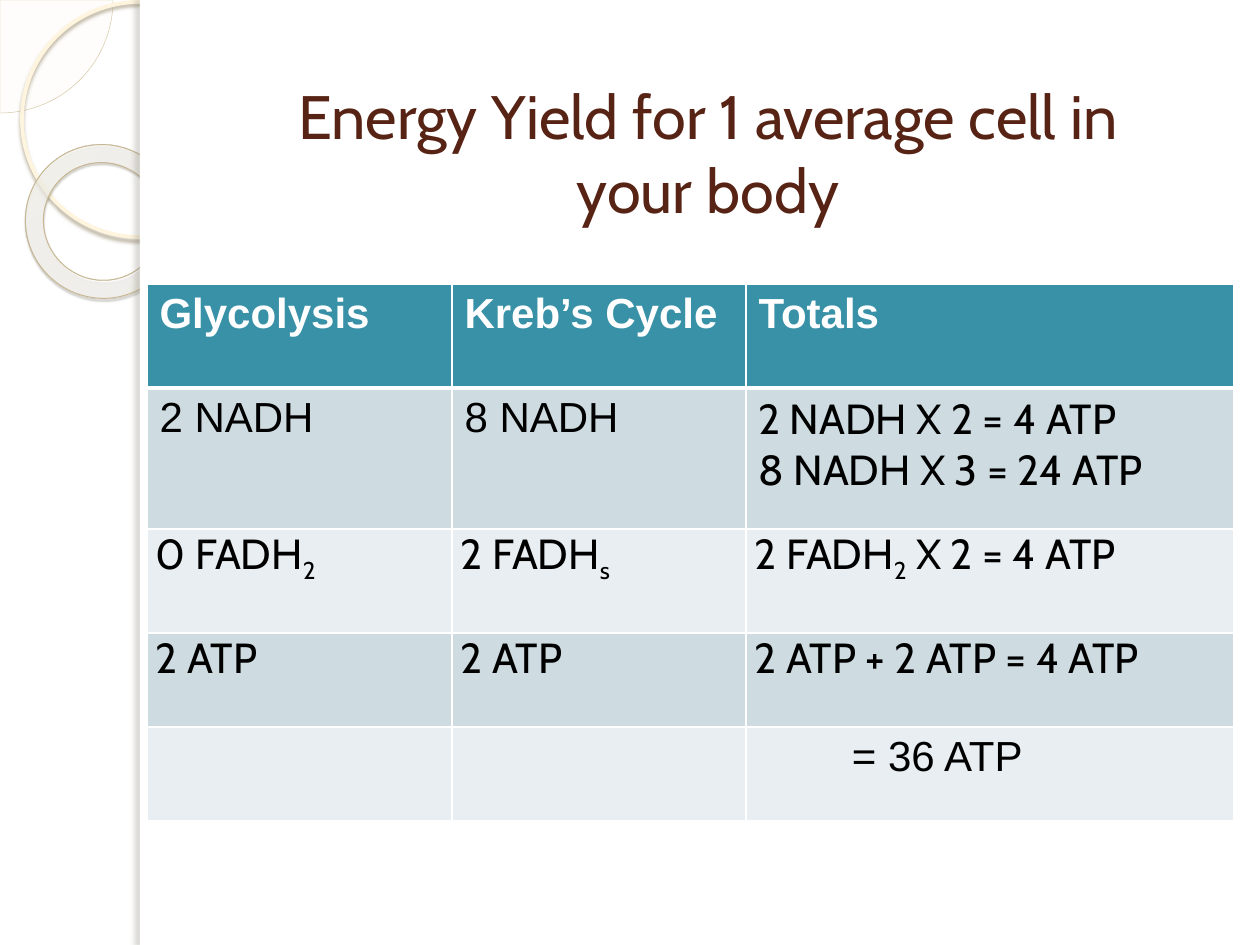
from lxml import etree
from pptx import Presentation
from pptx.dml.color import RGBColor
from pptx.enum.shapes import MSO_SHAPE
from pptx.enum.text import MSO_ANCHOR, PP_ALIGN
from pptx.oxml import parse_xml
from pptx.oxml.ns import qn
from pptx.util import Pt

PX = 914400 // 126
NS = 'xmlns:a="http://schemas.openxmlformats.org/drawingml/2006/main"'
PIE, ELLIPSE, DONUT, RECT = (MSO_SHAPE.PIE, MSO_SHAPE.OVAL, MSO_SHAPE.DONUT,
                             MSO_SHAPE.RECTANGLE)
COLORS = {
    "white": "FFFFFF", "black": "000000", "title": "572314", "header": "3891A7",
    "band": "CEDCE1", "light": "E8EEF1", "pie": "FEFAF4", "pie line": "D3C39F",
    "ring": "FFF5DE", "ring shadow": "B0A68F", "donut line": "C7B893",
    "donut shadow": "5A5444", "panel shadow": "736F63",
}

# Content: a cell is a list of lines; "_" marks the next letter as subscript
TITLE = "Energy Yield for 1 average cell in your body"
ROWS = [
    [["Glycolysis"], ["Kreb’s Cycle"], ["Totals"]],
    [["2 NADH"], ["8 NADH"], ["2 NADH X 2 = 4 ATP", "8 NADH X 3 = 24 ATP"]],
    [["0 FADH_2"], ["2 FADH_s"], ["2 FADH_2 X 2 = 4 ATP"]],
    [["2 ATP"], ["2 ATP"], ["2 ATP + 2 ATP = 4 ATP"]],
    [[], [], ["= 36 ATP"]],
]
COL_W = [305, 294, 488]
ROW_H = [104, 141, 104, 94, 94]
CABIN_CELLS = {(1, 2)} | {(r, c) for r in (2, 3) for c in range(3)}
TIGHT_ROWS = (2, 3)
TOTAL_CELL, TOTAL_INDENT = (4, 2), 106

# Decoration: shape, box, fill, (line, width), (shadow, alpha %, blur, distance, angle)
DECOR = [
    (PIE, (-113, -113, 226, 226), "pie", ("pie line", 0.25), None),
    (ELLIPSE, (22, 2, 235, 235), None, ("ring", 2.15), ("ring shadow", 85, 2, 2, 90)),
    (DONUT, (25, 145, 155, 153), None, ("donut line", 0.58),
     ("donut shadow", 35, 1, 1.2, 75)),
    (RECT, (140, 0, 1120, 945), "white", None, None),
    (RECT, (140, 0, 10, 945), "white", None, ("panel shadow", 25, 3, 3, 180)),
]
DONUT_STOPS = [(0, "FFFCF6", 70), (70, "FFFEFB", 55), (100, "F0D28E", 60)]


def px(*values):
    return [v * PX for v in values]


def rgb(name):
    return RGBColor.from_string(COLORS[name])


def set_alpha(shape, percent):
    color = shape.fill._xPr.find(".//" + qn("a:srgbClr"))
    etree.SubElement(color, qn("a:alpha"), val=str(percent * 1000))


def add_shadow(shape, name, alpha, blur, dist, angle):
    effects = shape._element.spPr.find(qn("a:effectLst"))
    effects.append(parse_xml(
        f'<a:outerShdw {NS} blurRad="{Pt(blur)}" dist="{Pt(dist)}" dir="{angle * 60000}" '
        f'algn="tl" rotWithShape="0"><a:srgbClr val="{COLORS[name]}">'
        f'<a:alpha val="{alpha * 1000}"/></a:srgbClr></a:outerShdw>'))


def add_gradient(shape, stops):
    gs = "".join(f'<a:gs pos="{pos * 1000}"><a:srgbClr val="{color}">'
                 f'<a:alpha val="{alpha * 1000}"/></a:srgbClr></a:gs>'
                 for pos, color, alpha in stops)
    spPr = shape._element.spPr
    spPr.replace(spPr.find(qn("a:noFill")), parse_xml(
        f'<a:gradFill {NS}><a:gsLst>{gs}</a:gsLst><a:path path="circle">'
        '<a:fillToRect l="-408000" t="-50000" r="508000" b="150000"/></a:path></a:gradFill>'))


def add_decor(s, kind, box, fill, line, shadow):
    sp = s.shapes.add_shape(kind, *px(*box))
    sp.shadow.inherit = False
    if fill:
        sp.fill.solid()
        sp.fill.fore_color.rgb = rgb(fill)
    else:
        sp.fill.background()
    if line:
        sp.line.color.rgb = rgb(line[0])
        sp.line.width = Pt(line[1])
    else:
        sp.line.fill.background()
    if shadow:
        add_shadow(sp, *shadow)
    return sp


def set_borders(cell, bottom):
    tcPr = cell._tc.get_or_add_tcPr()
    for i, (side, width) in enumerate((("L", 1), ("R", 1), ("T", 1), ("B", bottom))):
        tcPr.insert(i, parse_xml(
            f'<a:ln{side} {NS} w="{Pt(width)}"><a:solidFill>'
            f'<a:srgbClr val="{COLORS["white"]}"/></a:solidFill></a:ln{side}>'))


def style_font(font, name, size, color, bold=False):
    font.name, font.size, font.bold = name, Pt(size), bold
    font.color.rgb = rgb(color)


def write_line(p, text):
    before, mark, after = text.partition("_")
    p.add_run().text = before
    if mark:
        sub = p.add_run()
        sub.text = after[0]
        sub.font._element.set("baseline", "-25000")
        if after[1:]:
            p.add_run().text = after[1:]


def fill_cell(cell, r, c, lines):
    header = r == 0
    cell.fill.solid()
    cell.fill.fore_color.rgb = rgb("header" if header else "band" if r % 2 else "light")
    set_borders(cell, 3 if header else 1)
    if r in TIGHT_ROWS:
        cell.margin_left = cell.margin_right = 9 * PX
        cell.margin_top = cell.margin_bottom = 0
    if (r, c) == TOTAL_CELL:
        cell.margin_left = TOTAL_INDENT * PX
    tf = cell.text_frame
    for i, line in enumerate(lines):
        p = tf.add_paragraph() if i else tf.paragraphs[0]
        write_line(p, line)
        style_font(p.font, "Cabin" if (r, c) in CABIN_CELLS else "Arial", 24,
                   "white" if header else "black", header)


prs = Presentation()
prs.slide_width, prs.slide_height = px(1260, 945)
s = prs.slides.add_slide(prs.slide_layouts[6])

# Left margin decoration and white panel
pie, ring, donut, panel, edge = [add_decor(s, *item) for item in DECOR]
pie.adjustments[0], pie.adjustments[1] = 0, 54
set_alpha(pie, 33)
donut.adjustments[0] = 0.118
donut.rotation = 38.6
add_gradient(donut, DONUT_STOPS)

# Energy table
table = s.shapes.add_table(len(ROWS), len(COL_W),
                           *px(147, 284, sum(COL_W), sum(ROW_H))).table
for column, width in zip(table.columns, COL_W):
    column.width = width * PX
for r, (row, height) in enumerate(zip(ROWS, ROW_H)):
    table.rows[r].height = height * PX
    for c, lines in enumerate(row):
        fill_cell(table.cell(r, c), r, c, lines)

# Title
tf = s.shapes.add_textbox(*px(283, 73, 850, 158)).text_frame
tf.word_wrap = True
tf.vertical_anchor = MSO_ANCHOR.MIDDLE
p = tf.paragraphs[0]
p.text = TITLE
p.alignment = PP_ALIGN.CENTER
style_font(p.font, "Cabin", 35, "title")

prs.save("out.pptx")
